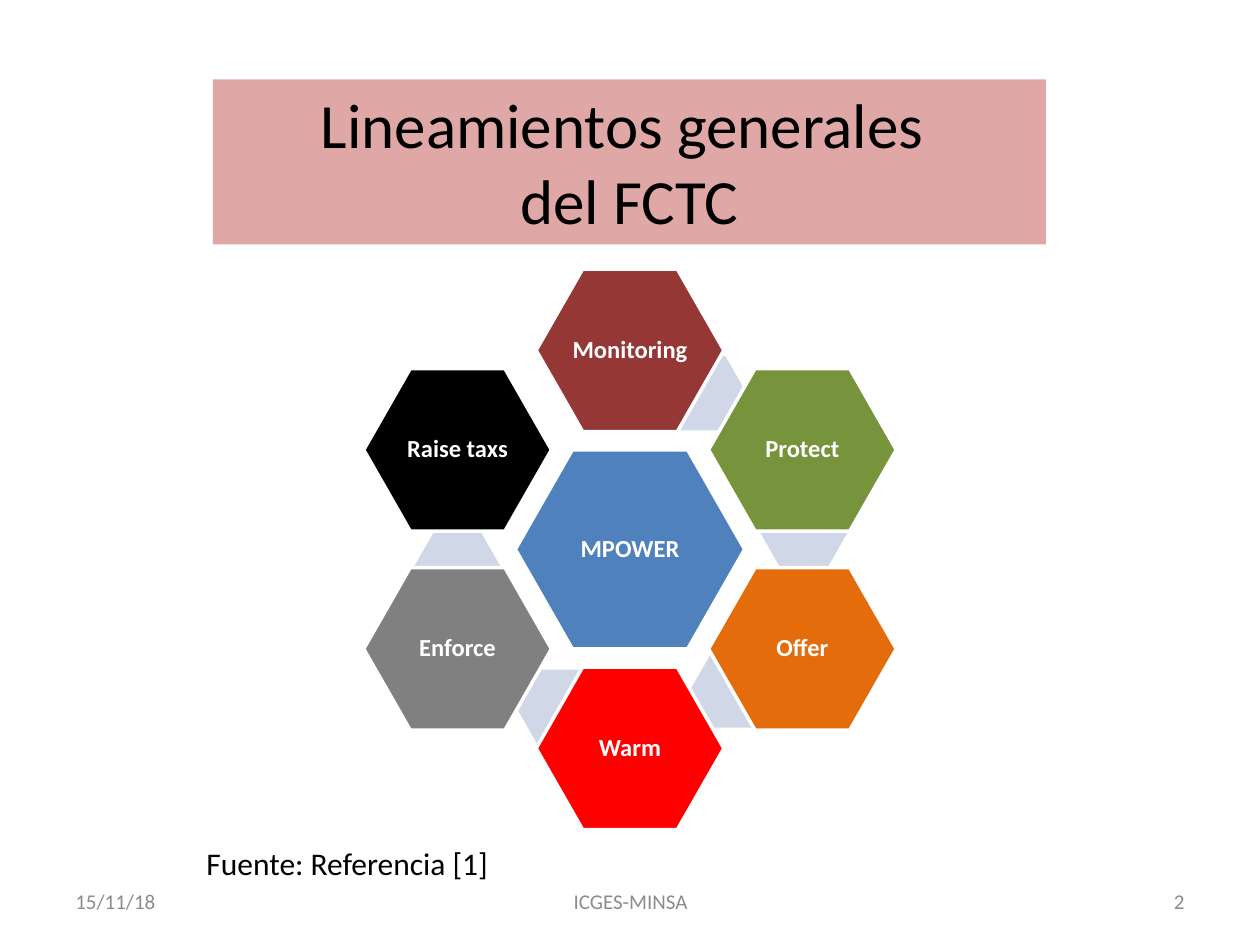
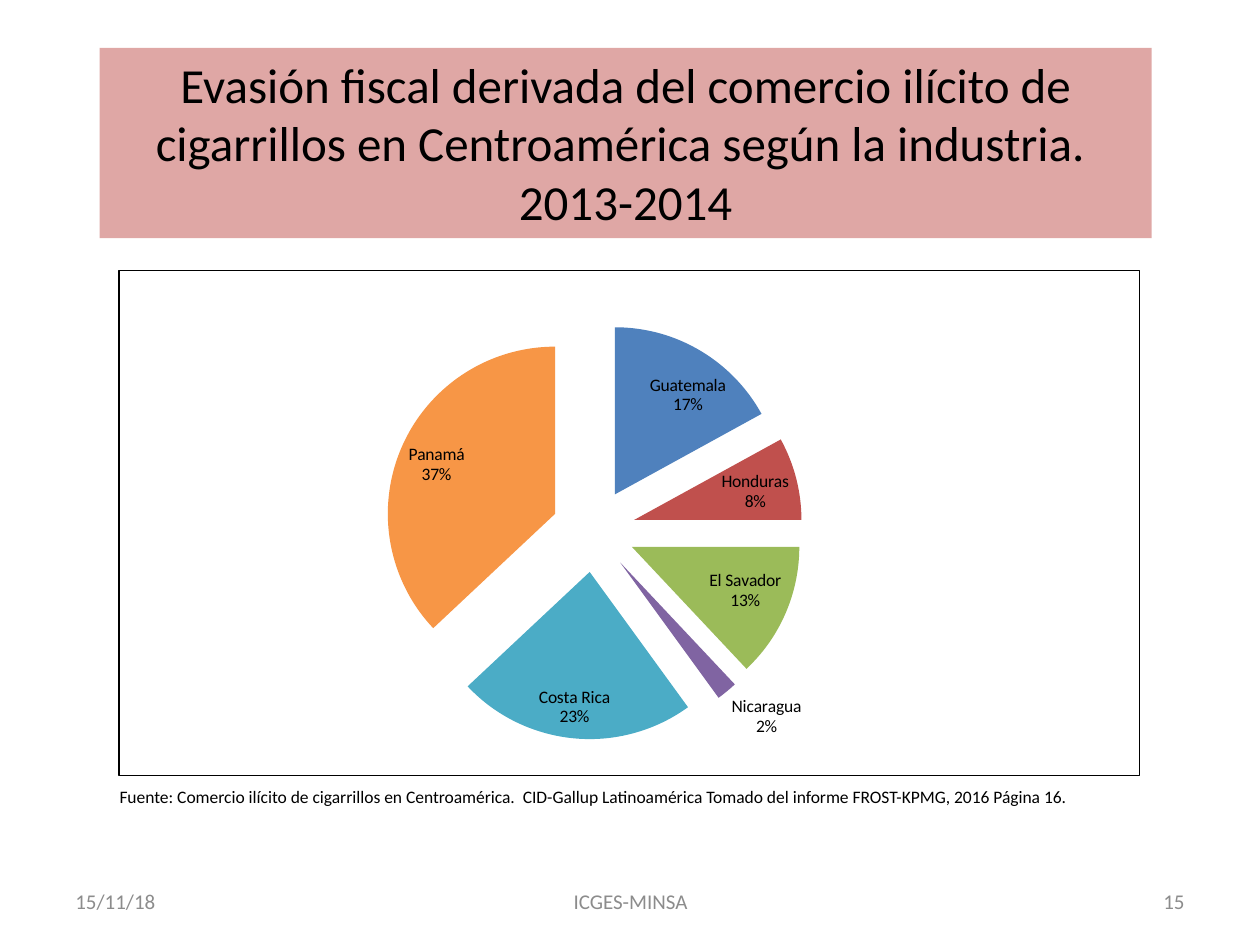
"""Build two slides on tobacco control: the MPOWER hexagons and a tax evasion pie."""
import math

import pptx
import pptx.chart.data
import pptx.dml.color
import pptx.enum.chart
import pptx.enum.shapes
import pptx.enum.text
import pptx.oxml
import pptx.oxml.ns
import pptx.util
from lxml import etree

Inches = pptx.util.Inches
Pt = pptx.util.Pt
qn = pptx.oxml.ns.qn
ALIGN = pptx.enum.text.PP_ALIGN
ANCHOR = pptx.enum.text.MSO_ANCHOR

FONT = "Calibri"
COLOURS = {
    "text": "000000", "white": "FFFFFF", "footer": "8C8C8C", "band": "C0504D",
    "link": "D0D8E8", "hub": "4F81BD", "maroon": "953735", "green": "77933C",
    "orange": "E46C0A", "red": "FF0000", "grey": "808080", "black": "000000",
    "pie_blue": "4F81BD", "pie_red": "C0504D", "pie_green": "9BBB59",
    "pie_purple": "8064A2", "pie_aqua": "4BACC6", "pie_orange": "F79646",
}

FOOTER = [
    ("15/11/18", 0.5, 2.33, ALIGN.LEFT),
    ("ICGES-MINSA", 3.42, 3.17, ALIGN.CENTER),
    (None, 7.17, 2.33, ALIGN.RIGHT),
]

GUIDELINES = {
    "number": "2",
    "title": ["Lineamientos generales ", "del FCTC"],
    "title_box": (1.69, 0.63, 6.61, 1.31),
    "title_size": 36,
    "source": "Fuente: Referencia [1]",
    "source_box": (1.54, 6.65, 2.91, 0.4),
    "source_size": 18,
}
HUB = "MPOWER"
HUB_CENTRE = (5, 4.36)
HUB_SIZE = (1.82, 1.58)
PETAL_SIZE = (1.49, 1.29)
LINK_SIZE = (0.69, 0.59)
RING_RADIUS = 1.58
PETALS = [
    ("Monitoring", "maroon", (5.58, 3.12)),
    ("Protect", "green", (6.38, 4.23)),
    ("Offer", "orange", (5.82, 5.48)),
    ("Warm", "red", (4.44, 5.61)),
    ("Enforce", "grey", (3.63, 4.5)),
    ("Raise taxs", "black", None),
]

EVASION = {
    "number": "15",
    "title": ["Evasión fiscal derivada del comercio ilícito de cigarrillos en "
              "Centroamérica según la industria.  2013-2014"],
    "title_box": (0.79, 0.38, 8.35, 1.51),
    "title_size": 28,
    "source": "Fuente: Comercio ilícito de cigarrillos en Centroamérica.  CID-Gallup "
              "Latinoamérica Tomado del informe FROST-KPMG, 2016 Página 16.",
    "source_box": (0.85, 6.19, 8.11, 0.27),
    "source_size": 10,
}
CHART_BOX = (0.94, 2.14, 8.11, 4.02)
PIE_LAYOUT = {"x": 0.26, "y": 0.1, "w": 0.41, "h": 0.83}
EXPLOSION = 25
SHARES = [
    ("Guatemala", 17, "pie_blue"),
    ("Honduras", 8, "pie_red"),
    ("El Savador", 13, "pie_green"),
    ("Nicaragua", 2, "pie_purple"),
    ("Costa Rica", 23, "pie_aqua"),
    ("Panamá", 37, "pie_orange"),
]


def rgb(name):
    return pptx.dml.color.RGBColor.from_string(COLOURS[name])


def inches(box):
    return [Inches(length) for length in box]


def style_font(font, size, colour, bold=False):
    font.name = FONT
    font.size = Pt(size)
    font.bold = bold
    font.color.rgb = rgb(colour)


def write(shape, lines, size, colour="text", align=ALIGN.LEFT, anchor=ANCHOR.TOP, bold=False):
    frame = shape.text_frame
    frame.word_wrap = True
    frame.vertical_anchor = anchor
    frame.text = "\n".join(lines)
    for paragraph in frame.paragraphs:
        paragraph.alignment = align
        style_font(paragraph.font, size, colour, bold)
    return frame


def add_filled(slide, kind, box, colour):
    shape = slide.shapes.add_shape(kind, *inches(box))
    shape.shadow.inherit = False
    shape.fill.solid()
    shape.fill.fore_color.rgb = rgb(colour)
    shape.line.fill.background()
    return shape


def add_title(slide, content):
    band = add_filled(slide, pptx.enum.shapes.MSO_SHAPE.RECTANGLE, content["title_box"], "band")
    fill_colour = band.fill._xPr.find(".//" + qn("a:srgbClr"))
    etree.SubElement(fill_colour, qn("a:alpha"), val="50000")
    write(band, content["title"], content["title_size"], align=ALIGN.CENTER)


def add_footer(slide, number):
    for text, left, width, align in FOOTER:
        box = slide.shapes.add_textbox(*inches((left, 6.95, width, 0.4)))
        write(box, [text or number], 12, "footer", align, ANCHOR.MIDDLE)


def add_slide(presentation, content):
    slide = presentation.slides.add_slide(presentation.slide_layouts[6])
    add_title(slide, content)
    add_footer(slide, content["number"])
    source = slide.shapes.add_textbox(*inches(content["source_box"]))
    write(source, [content["source"]], content["source_size"])
    return slide


def add_hexagon(slide, centre, size, colour, label=None):
    box = (centre[0] - size[0] / 2, centre[1] - size[1] / 2, *size)
    hexagon = add_filled(slide, pptx.enum.shapes.MSO_SHAPE.HEXAGON, box, colour)
    hexagon.adjustments[0] = 0.286
    if label:
        hexagon.line.color.rgb = rgb("white")
        hexagon.line.width = Pt(2)
        frame = write(hexagon, [label], 14, "white", ALIGN.CENTER, ANCHOR.MIDDLE, True)
        frame.word_wrap = False
        frame.margin_left = frame.margin_right = Inches(0.02)
        frame.margin_top = frame.margin_bottom = Inches(0.02)
        frame.paragraphs[0].line_spacing = 0.9


def add_mpower(slide):
    add_hexagon(slide, HUB_CENTRE, HUB_SIZE, "hub", HUB)
    for index, (label, colour, link_centre) in enumerate(PETALS):
        if link_centre:
            add_hexagon(slide, link_centre, LINK_SIZE, "link")
        angle = math.radians(360 / len(PETALS) * index - 90)
        centre = (HUB_CENTRE[0] + RING_RADIUS * math.cos(angle),
                  HUB_CENTRE[1] + RING_RADIUS * math.sin(angle))
        add_hexagon(slide, centre, PETAL_SIZE, colour, label)


def add_chart_border(chart):
    border = pptx.oxml.parse_xml(
        f'<c:spPr {pptx.oxml.ns.nsdecls("c", "a")}><a:noFill/><a:ln w="{Pt(0.75)}"><a:solidFill>'
        f'<a:srgbClr val="{COLOURS["text"]}"/></a:solidFill></a:ln></c:spPr>')
    chart.element.find(qn("c:chart")).addnext(border)


def set_pie_layout(chart):
    plot_area = chart.element.find(".//" + qn("c:plotArea"))
    for old_layout in plot_area.findall(qn("c:layout")):
        plot_area.remove(old_layout)
    layout = etree.Element(qn("c:layout"))
    manual = etree.SubElement(layout, qn("c:manualLayout"))
    settings = {"layoutTarget": "inner", "xMode": "edge", "yMode": "edge", **PIE_LAYOUT}
    for name, value in settings.items():
        etree.SubElement(manual, qn("c:" + name), val=str(value))
    plot_area.insert(0, layout)


def add_pie(slide):
    names, values, colours = zip(*SHARES)
    data = pptx.chart.data.CategoryChartData()
    data.categories = names
    data.add_series("Series 1", values)
    chart = slide.shapes.add_chart(
        pptx.enum.chart.XL_CHART_TYPE.PIE, *inches(CHART_BOX), data).chart
    chart.has_title = False
    chart.has_legend = False
    style_font(chart.font, 10, "text")
    add_chart_border(chart)
    set_pie_layout(chart)

    plot = chart.plots[0]
    plot.vary_by_categories = True
    series = plot.series[0]
    for index, colour in enumerate(colours):
        fill = series.points[index].format.fill
        fill.solid()
        fill.fore_color.rgb = rgb(colour)
    explosion = etree.Element(qn("c:explosion"), val=str(EXPLOSION))
    series._element.find(qn("c:dPt")).addprevious(explosion)

    labels = series.data_labels
    labels.show_value = False
    labels.show_category_name = True
    labels.show_percentage = True
    labels.number_format = "0%"
    labels.number_format_is_linked = False
    labels.position = pptx.enum.chart.XL_LABEL_POSITION.BEST_FIT
    style_font(labels.font, 10, "text")
    separator = etree.Element(qn("c:separator"))
    separator.text = "\n"
    labels._element.find(qn("c:showBubbleSize")).addnext(separator)


def main():
    presentation = pptx.Presentation()
    presentation.slide_width = Inches(10)
    presentation.slide_height = Inches(7.5)
    add_mpower(add_slide(presentation, GUIDELINES))
    add_pie(add_slide(presentation, EVASION))
    presentation.save("out.pptx")


if __name__ == "__main__":
    main()
